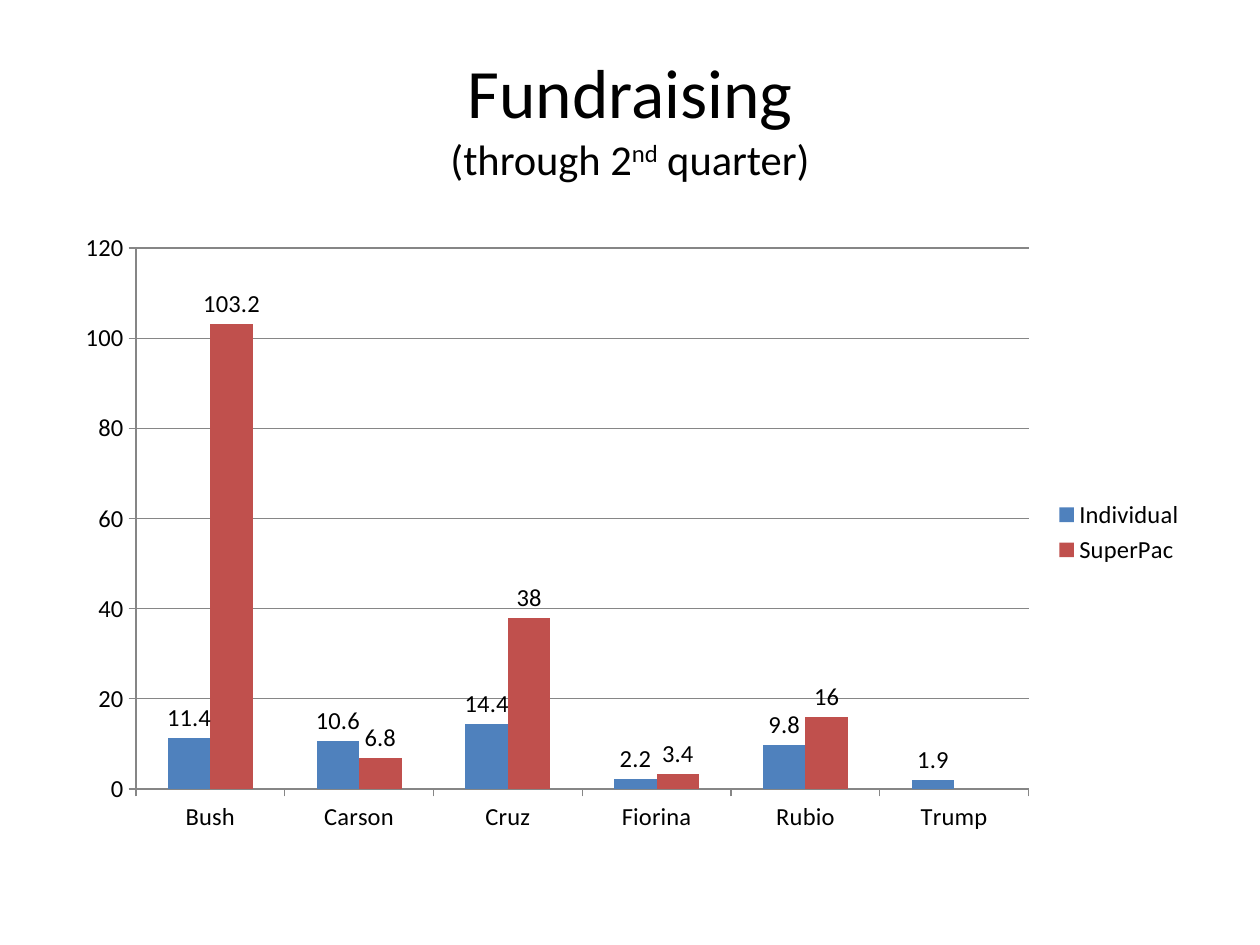
from dataclasses import dataclass

from pptx import Presentation
from pptx.chart.data import CategoryChartData
from pptx.dml.color import RGBColor
from pptx.enum.chart import XL_CHART_TYPE, XL_LABEL_POSITION, XL_LEGEND_POSITION, XL_TICK_MARK
from pptx.enum.text import MSO_ANCHOR, PP_ALIGN
from pptx.util import Inches, Pt

CLUSTERED = XL_CHART_TYPE.COLUMN_CLUSTERED
LABEL_ABOVE = XL_LABEL_POSITION.OUTSIDE_END
LEGEND_RIGHT = XL_LEGEND_POSITION.RIGHT
TICK_OUTSIDE = XL_TICK_MARK.OUTSIDE
MIDDLE = MSO_ANCHOR.MIDDLE
CENTER = PP_ALIGN.CENTER

BLACK = RGBColor(0x00, 0x00, 0x00)
GRAY = RGBColor(0x86, 0x86, 0x86)
BLUE = RGBColor(0x4F, 0x81, 0xBD)
RED = RGBColor(0xC0, 0x50, 0x4D)

FONT = "Calibri"
PAGE_WIDTH, PAGE_HEIGHT = Inches(10), Inches(7.5)
CHART_TEXT = 14


@dataclass
class Area:
    """A rectangle given as shares of the page size."""
    left: float
    top: float
    width: float
    height: float

    def lengths(self) -> tuple[int, int, int, int]:
        return (int(self.left * PAGE_WIDTH), int(self.top * PAGE_HEIGHT),
                int(self.width * PAGE_WIDTH), int(self.height * PAGE_HEIGHT))


@dataclass
class Funding:
    name: str
    millions: tuple
    color: RGBColor


TITLE_AREA = Area(0.05, 0.04, 0.9, 1 / 6)
CHART_AREA = Area(0.05, 0.7 / 3, 0.9, 0.66)
CANDIDATES = ("Bush", "Carson", "Cruz", "Fiorina", "Rubio", "Trump")
SOURCES = (
    Funding("Individual", (11.4, 10.6, 14.4, 2.2, 9.8, 1.9), BLUE),
    Funding("SuperPac", (103.2, 6.8, 38, 3.4, 16, None), RED),
)


def style_font(font, size: float) -> None:
    font.name = FONT
    font.size = Pt(size)
    font.color.rgb = BLACK


def add_title(page) -> None:
    box = page.shapes.add_textbox(*TITLE_AREA.lengths())
    frame = box.text_frame
    frame.word_wrap = True
    frame.vertical_anchor = MIDDLE
    para = frame.paragraphs[0]
    para.text = "Fundraising\v(through 2"
    para.alignment = CENTER
    for ending in ("nd", " quarter)"):
        para.add_run().text = ending
    heading, *subtitle = para.runs
    style_font(heading.font, 39.6)
    for span in subtitle:
        style_font(span.font, 24.3)
    # Raise the ordinal ending
    subtitle[1].font._element.set("baseline", "30000")


def style_axis(axis) -> None:
    axis.major_tick_mark = TICK_OUTSIDE
    axis.format.line.color.rgb = GRAY
    style_font(axis.tick_labels.font, CHART_TEXT)


def add_funding_chart(page) -> None:
    data = CategoryChartData()
    data.categories = CANDIDATES
    for source in SOURCES:
        data.add_series(source.name, source.millions)
    chart = page.shapes.add_chart(CLUSTERED, *CHART_AREA.lengths(), data).chart
    style_font(chart.font, 10)
    chart.has_title = False

    # Axes and gridlines
    style_axis(chart.category_axis)
    style_axis(chart.value_axis)
    chart.value_axis.has_major_gridlines = True
    chart.value_axis.major_gridlines.format.line.color.rgb = GRAY

    # Columns with their values
    plot = chart.plots[0]
    plot.gap_width = 150
    plot.overlap = 0
    plot.vary_by_categories = False
    for series, source in zip(plot.series, SOURCES):
        series.format.fill.solid()
        series.format.fill.fore_color.rgb = source.color
        labels = series.data_labels
        labels.show_value = True
        labels.position = LABEL_ABOVE
        style_font(labels.font, CHART_TEXT)

    # Legend
    chart.has_legend = True
    chart.legend.position = LEGEND_RIGHT
    chart.legend.include_in_layout = False
    style_font(chart.legend.font, CHART_TEXT)


def main() -> None:
    deck = Presentation()
    deck.slide_width, deck.slide_height = PAGE_WIDTH, PAGE_HEIGHT
    page = deck.slides.add_slide(deck.slide_layouts[6])
    add_title(page)
    add_funding_chart(page)
    deck.save("out.pptx")


if __name__ == "__main__":
    main()
